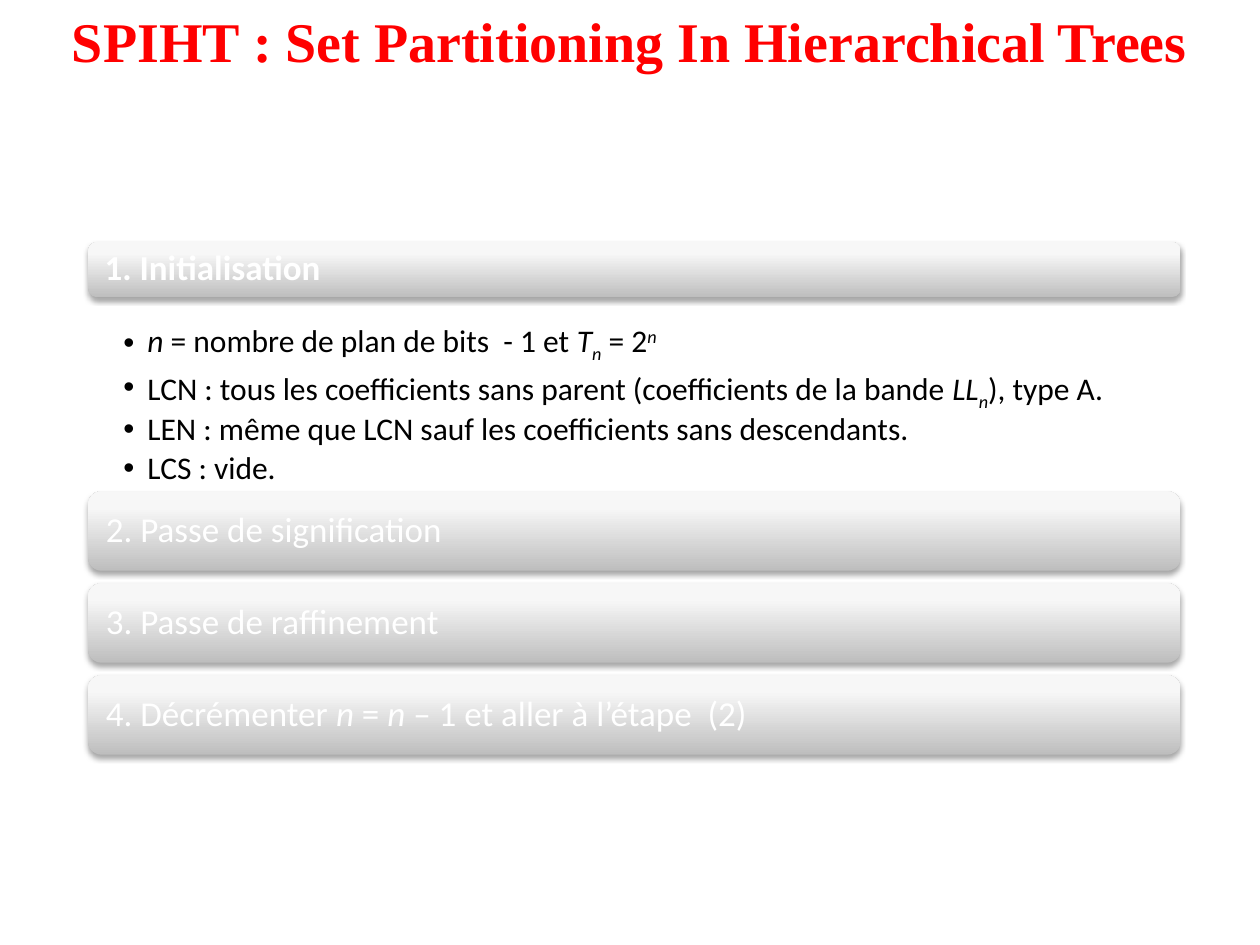
"""Build the slide on the steps of the SPIHT algorithm."""
from lxml import etree
from pptx import Presentation
from pptx.dml.color import RGBColor
from pptx.enum.shapes import MSO_SHAPE
from pptx.enum.text import MSO_ANCHOR, PP_ALIGN
from pptx.oxml import parse_xml
from pptx.util import Inches, Pt

ROUND = MSO_SHAPE.ROUNDED_RECTANGLE
TOP, MIDDLE = MSO_ANCHOR.TOP, MSO_ANCHOR.MIDDLE
LEFT, CENTER = PP_ALIGN.LEFT, PP_ALIGN.CENTER
NS = "http://schemas.openxmlformats.org/drawingml/2006/main"
SHIFT = {"sub": "-25000", "sup": "30000"}
GRAD = f"""<a:gradFill xmlns:a="{NS}" rotWithShape="1"><a:gsLst>
<a:gs pos="0"><a:srgbClr val="BEBEBE"/></a:gs>
<a:gs pos="80000"><a:srgbClr val="F7F7F7"/></a:gs>
<a:gs pos="100000"><a:srgbClr val="F8F8F8"/></a:gs>
</a:gsLst><a:lin ang="16200000" scaled="0"/></a:gradFill>"""
SHADOW = f"""<a:effectLst xmlns:a="{NS}">
<a:outerShdw blurRad="39370" dist="22860" dir="5400000" rotWithShape="0">
<a:srgbClr val="000000"><a:alpha val="35000"/></a:srgbClr>
</a:outerShdw></a:effectLst>"""


def write(para, runs, size=20, color="FFFFFF", font="Calibri", bold=False,
          align=LEFT, space=0.9, after=0):
    """Fill a paragraph with (text, style) runs."""
    para.alignment, para.line_spacing, para.space_after = align, space, Pt(after)
    for text, style in runs:
        run = para.add_run()
        run.text = text
        run.font.name, run.font.size, run.font.bold = font, Pt(size), bold
        run.font.italic = style != ""
        run.font.color.rgb = RGBColor.from_string(color)
        if style in SHIFT:
            run._r.get_or_add_rPr().set("baseline", SHIFT[style])


def inset(frame, left, top, right):
    """Set the margins of a text frame and let it wrap."""
    frame.word_wrap = True
    frame.margin_left, frame.margin_right = Inches(left), Inches(right)
    frame.margin_top = frame.margin_bottom = Inches(top)


deck = Presentation()
deck.slide_width, deck.slide_height = Inches(10), Inches(7.5)
slide = deck.slides.add_slide(deck.slide_layouts[5])

title = slide.shapes.title
title.left, title.top = Inches(0), Inches(0)
title.width, title.height = Inches(10), Inches(1.18)
inset(title.text_frame, 0.1, 0.05, 0.1)
title.text_frame.vertical_anchor = TOP
write(title.text_frame.paragraphs[0],
      [("SPIHT : Set Partitioning In Hierarchical Trees", "")],
      size=32, color="FF0000", font="Times New Roman", bold=True,
      align=CENTER, space=1.0)

steps = [
    [("1. Initialisation", "")],
    [("2. Passe de signification", "")],
    [("3. Passe de raffinement", "")],
    [("4. Décrémenter ", ""), ("n ", "i"), ("= ", ""), ("n", "i"),
     (" – 1 et aller à l’étape  (2)", "")],
]
for i, runs in enumerate(steps):
    first = i == 0
    top, high = (1.92, 0.44) if first else (3.9 + 0.73 * (i - 1), 0.63)
    bar = slide.shapes.add_shape(ROUND, Inches(0.7), Inches(top),
                                 Inches(8.67), Inches(high))
    props = bar.element.spPr
    props.append(parse_xml(GRAD))
    bar.line.fill.background()
    props.append(parse_xml(SHADOW))
    inset(bar.text_frame, 0.11, 0.08, 0.11)
    bar.text_frame.vertical_anchor = MIDDLE
    write(bar.text_frame.paragraphs[0], runs, bold=first)

points = [
    [("n", "i"), (" = nombre de plan de bits  - 1 et ", ""), ("T", "i"),
     ("n", "sub"), (" = 2", ""), ("n", "sup")],
    [("LCN : tous les coefficients sans parent (coefficients de la bande ", ""),
     ("LL", "i"), ("n", "sub"), ("), type A.", "")],
    [("LEN : même que LCN sauf les coefficients sans descendants.", "")],
    [("LCS : vide.", "")],
]
box = slide.shapes.add_textbox(Inches(0.7), Inches(2.35), Inches(8.67), Inches(1.54))
body = box.text_frame
inset(body, 0.28, 0.03, 0.14)
for i, runs in enumerate(points):
    para = body.add_paragraph() if i else body.paragraphs[0]
    write(para, runs, size=18, color="000000", space=0.9 if i else 1.5, after=3)
    para.level = 1
    props = para._p.get_or_add_pPr()
    props.set("marL", str(Inches(0.19)))
    props.set("indent", str(Inches(-0.19)))
    etree.SubElement(props, f"{{{NS}}}buFont").set("typeface", "Arial")
    etree.SubElement(props, f"{{{NS}}}buChar").set("char", "•")

deck.save("out.pptx")
